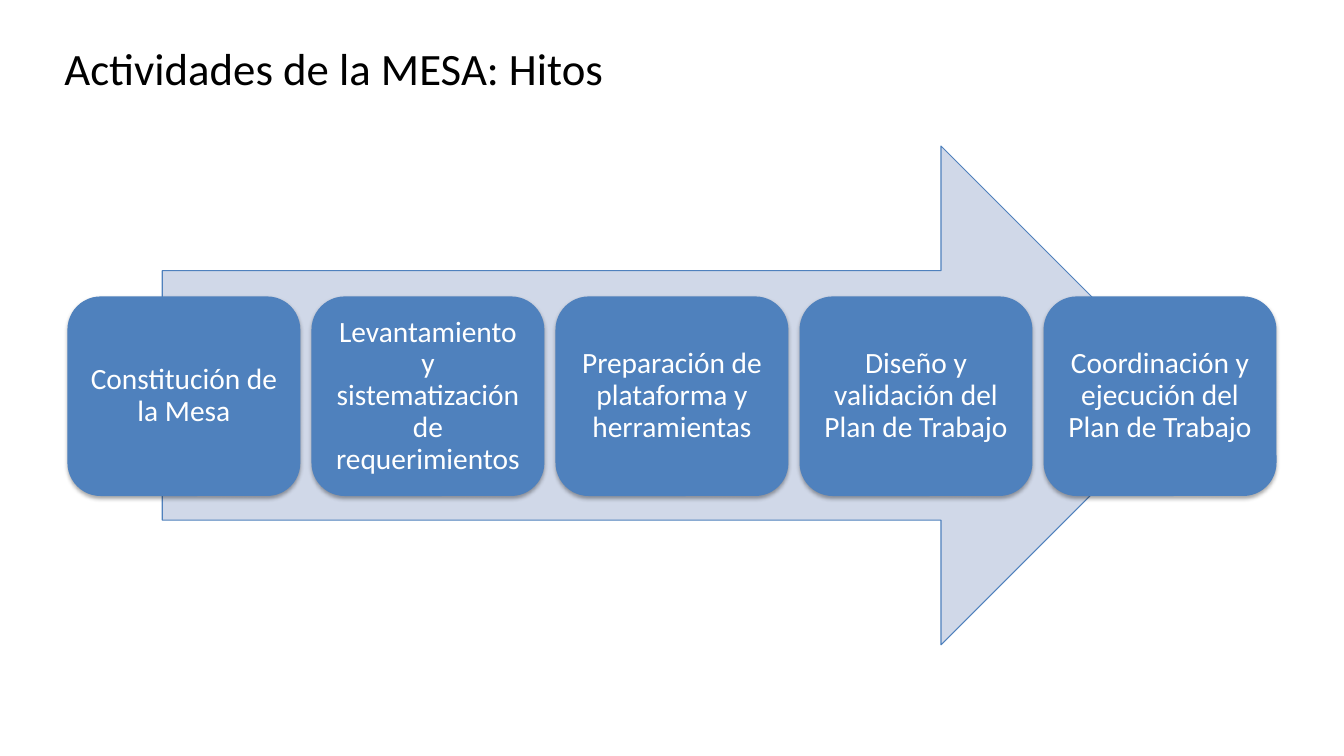
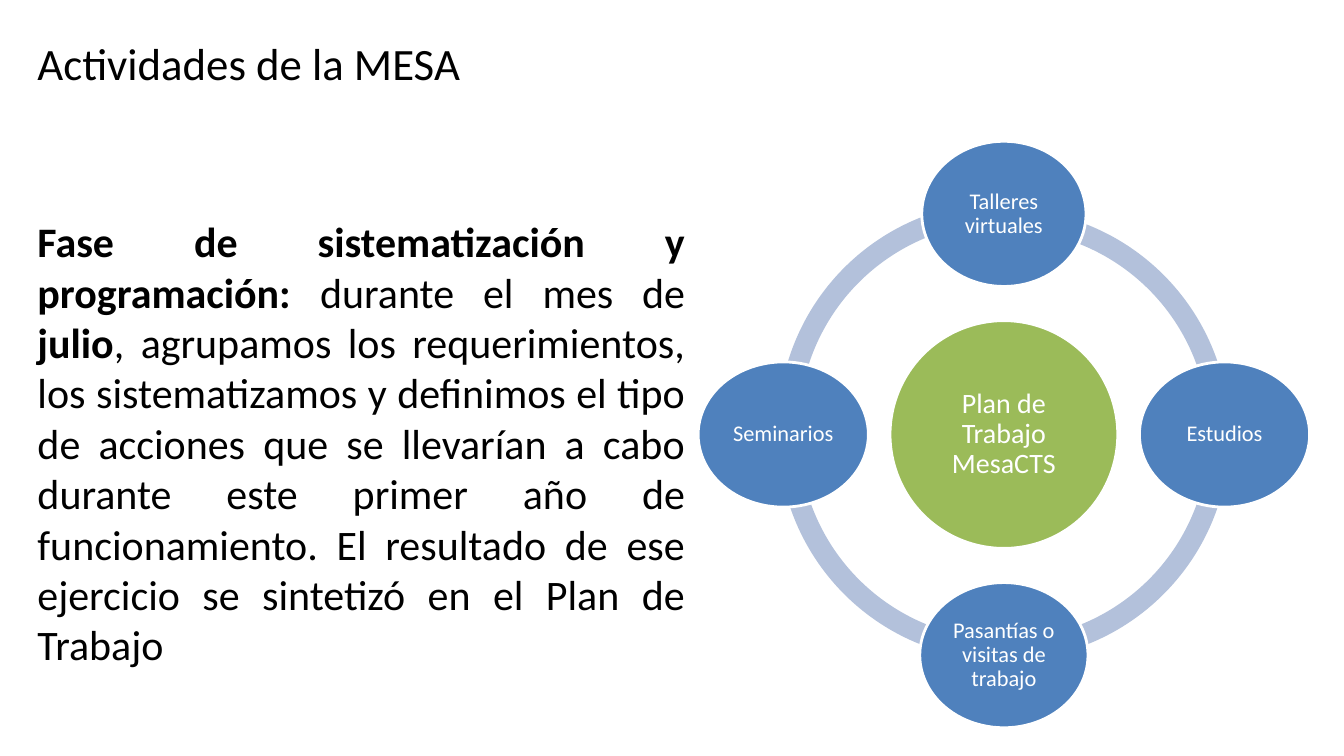
import math
from dataclasses import dataclass

import lxml.etree
import pptx
import pptx.dml.color
import pptx.enum.shapes
import pptx.enum.text
import pptx.oxml.ns
import pptx.shapes.autoshape
import pptx.slide
import pptx.text.text
import pptx.util

Cm = pptx.util.Cm
Pt = pptx.util.Pt
SHAPES = pptx.enum.shapes.MSO_SHAPE
ALIGN = pptx.enum.text.PP_ALIGN
ANCHOR = pptx.enum.text.MSO_ANCHOR
qn = pptx.oxml.ns.qn

FONT = "Calibri"
BLACK, WHITE = "000000", "FFFFFF"
BLUE, GREEN = "4F81BD", "9BBB59"
PALE_BLUE, RING_BLUE = "D0D8E8", "B3C1DB"


@dataclass(frozen=True)
class Box:
    left: float
    top: float
    width: float
    height: float


@dataclass(frozen=True)
class Activity:
    label: str
    angle: int
    width: float


MILESTONES = [
    "Constitución de la Mesa",
    "Levantamiento y sistematización de requerimientos",
    "Preparación de plataforma y herramientas",
    "Diseño y validación del Plan de Trabajo",
    "Coordinación y ejecución del Plan de Trabajo",
]
MILESTONE_PITCH = 6.15

ACTIVITIES = [
    Activity("Talleres virtuales", 270, 4.14),
    Activity("Estudios", 0, 4.29),
    Activity("Pasantías o visitas de trabajo", 90, 4.24),
    Activity("Seminarios", 180, 4.29),
]
ACTIVITY_HEIGHT = 3.66
PLAN_X, PLAN_Y, PLAN_DIAMETER = 25.3, 10.95, 5.74
ORBIT_RADIUS, RING_DIAMETER = 5.56, 11.38
RING_THICKNESS = 0.046

PHASE = [
    ("Fase de sistematización y programación: ", True),
    ("durante el mes de ", False),
    ("julio", True),
    (", agrupamos los requerimientos, los sistematizamos y definimos el tipo "
     "de acciones que se llevarían a cabo durante este primer año de "
     "funcionamiento. El resultado de ese ejercicio se sintetizó en el Plan "
     "de Trabajo", False),
]


def rgb(value: str) -> pptx.dml.color.RGBColor:
    return pptx.dml.color.RGBColor.from_string(value)


def centred(x: float, y: float, width: float, height: float) -> Box:
    return Box(x - width / 2, y - height / 2, width, height)


def style_font(font: pptx.text.text.Font, size: float, color: str) -> None:
    font.name = FONT
    font.size = Pt(size)
    font.color.rgb = rgb(color)


def place(placeholder, box: Box) -> pptx.text.text.TextFrame:
    placeholder.left, placeholder.top = Cm(box.left), Cm(box.top)
    placeholder.width, placeholder.height = Cm(box.width), Cm(box.height)
    frame = placeholder.text_frame
    frame.word_wrap = True
    frame.auto_size = pptx.enum.text.MSO_AUTO_SIZE.NONE
    frame.vertical_anchor = ANCHOR.TOP
    return frame


def add_title(slide: pptx.slide.Slide, title: str, left: float, top: float) -> None:
    frame = place(slide.shapes.title, Box(left, top, 23.98, 2.16))
    frame.text = title
    frame.paragraphs[0].alignment = ALIGN.LEFT
    style_font(frame.paragraphs[0].runs[0].font, 32, BLACK)


def add_figure(slide: pptx.slide.Slide, kind: SHAPES, box: Box, fill: str,
               line: str = "", line_width: float = 0) -> pptx.shapes.autoshape.Shape:
    figure = slide.shapes.add_shape(
        kind, Cm(box.left), Cm(box.top), Cm(box.width), Cm(box.height))
    figure.shadow.inherit = False
    figure.fill.solid()
    figure.fill.fore_color.rgb = rgb(fill)
    if line:
        figure.line.color.rgb = rgb(line)
        figure.line.width = Pt(line_width)
    else:
        figure.line.fill.background()
    return figure


def add_label(figure: pptx.shapes.autoshape.Shape, label: str, size: float,
              inset: float) -> None:
    frame = figure.text_frame
    frame.word_wrap = True
    frame.vertical_anchor = ANCHOR.MIDDLE
    frame.margin_left = frame.margin_right = Cm(inset)
    frame.margin_top = frame.margin_bottom = Cm(inset)
    frame.text = label
    paragraph = frame.paragraphs[0]
    paragraph.alignment = ALIGN.CENTER
    paragraph.line_spacing = 0.9
    style_font(paragraph.runs[0].font, size, WHITE)


def add_soft_shadow(figure: pptx.shapes.autoshape.Shape) -> None:
    effects = figure._element.spPr.find(qn("a:effectLst"))
    shadow = lxml.etree.SubElement(
        effects, qn("a:outerShdw"), blurRad=str(Pt(3.1)), dist=str(Pt(1.8)),
        dir="5400000", rotWithShape="0")
    color = lxml.etree.SubElement(shadow, qn("a:srgbClr"), val=BLACK)
    lxml.etree.SubElement(color, qn("a:alpha"), val="35000")


def build_milestones(slide: pptx.slide.Slide) -> None:
    add_title(slide, "Actividades de la MESA: Hitos", 1.37, 0.89)
    add_figure(slide, SHAPES.RIGHT_ARROW, Box(4.09, 3.68, 25.91, 12.57),
               PALE_BLUE, BLUE, 0.75)
    for index, label in enumerate(MILESTONES):
        box = Box(1.7 + index * MILESTONE_PITCH, 7.47, 5.87, 5.03)
        milestone = add_figure(slide, SHAPES.ROUNDED_RECTANGLE, box, BLUE)
        add_soft_shadow(milestone)
        add_label(milestone, label, 21, 0.23)


def add_phase(slide: pptx.slide.Slide) -> None:
    frame = place(slide.placeholders[1], Box(0.69, 5.31, 16.84, 10.67))
    paragraph = frame.paragraphs[0]
    properties = paragraph._p.get_or_add_pPr()
    properties.set("marL", "0")
    properties.set("indent", "0")
    lxml.etree.SubElement(properties, qn("a:buNone"))
    paragraph.alignment = ALIGN.JUSTIFY
    paragraph.space_before = Pt(0)
    for wording, bold in PHASE:
        run = paragraph.add_run()
        run.text = wording
        style_font(run.font, 30, BLACK)
        run.font.bold = bold


def add_ring(slide: pptx.slide.Slide) -> None:
    for start in (180, 90, 0, 270):
        rise = 0.18 if start == 180 else 0
        box = centred(PLAN_X, PLAN_Y - rise, RING_DIAMETER, RING_DIAMETER)
        arc = add_figure(slide, SHAPES.BLOCK_ARC, box, RING_BLUE)
        arc.adjustments[0] = start * 0.6
        arc.adjustments[1] = (start + 90) % 360 * 0.6
        arc.adjustments[2] = RING_THICKNESS


def build_work_plan(slide: pptx.slide.Slide) -> None:
    add_title(slide, "Actividades de la MESA", 0.69, 0.76)
    add_phase(slide)
    add_ring(slide)
    plan = add_figure(slide, SHAPES.OVAL,
                      centred(PLAN_X, PLAN_Y, PLAN_DIAMETER, PLAN_DIAMETER),
                      GREEN, WHITE, 2)
    add_label(plan, "Plan de Trabajo MesaCTS", 20, 0.08)
    for activity in ACTIVITIES:
        angle = math.radians(activity.angle)
        box = centred(PLAN_X + ORBIT_RADIUS * math.cos(angle),
                      PLAN_Y + ORBIT_RADIUS * math.sin(angle),
                      activity.width, ACTIVITY_HEIGHT)
        oval = add_figure(slide, SHAPES.OVAL, box, BLUE, WHITE, 2)
        add_label(oval, activity.label, 16, 0.05)


def main() -> None:
    deck = pptx.Presentation()
    deck.slide_width, deck.slide_height = Cm(33.87), Cm(19.05)
    build_milestones(deck.slides.add_slide(deck.slide_layouts[5]))
    build_work_plan(deck.slides.add_slide(deck.slide_layouts[1]))
    deck.save("out.pptx")


if __name__ == "__main__":
    main()
